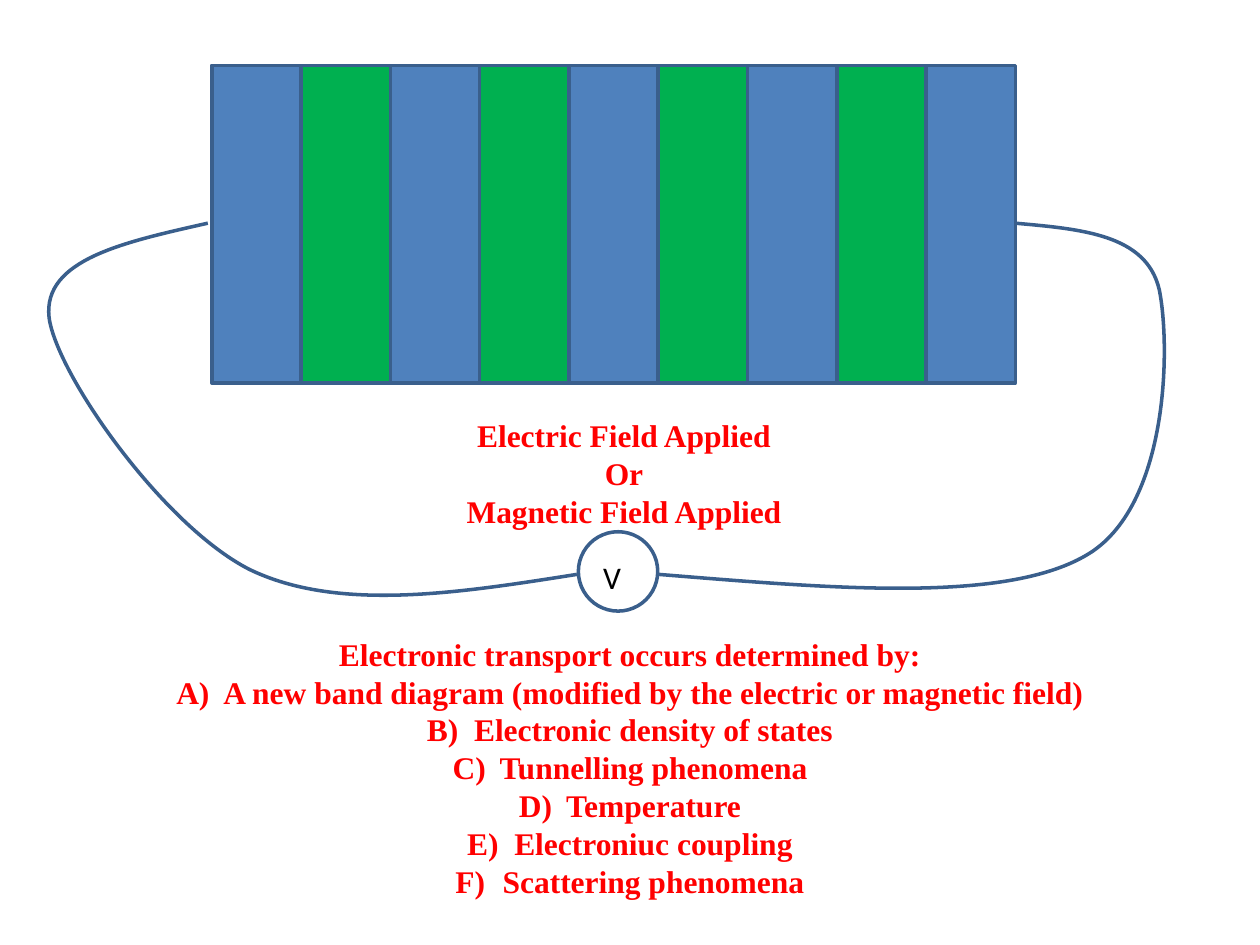
from dataclasses import dataclass

from lxml.etree import SubElement as Sub
from pptx import Presentation
from pptx.dml.color import RGBColor as Rgb
from pptx.enum.shapes import MSO_SHAPE as Kind
from pptx.enum.text import MSO_ANCHOR as Anchor, MSO_AUTO_SIZE as Auto, PP_ALIGN as Align
from pptx.oxml.ns import qn
from pptx.util import Cm, Pt

HUES = {"well": "4F81BD", "wall": "00B050", "edge": "3A5F8C", "note": "FF0000", "ink": "000000"}
Point = tuple[float, float]


@dataclass(frozen=True)
class Box:
    left: float
    top: float
    width: float
    height: float

    def cm(self) -> list[Cm]:
        return [Cm(n) for n in (self.left, self.top, self.width, self.height)]


@dataclass(frozen=True)
class Wire:
    start: Point
    bends: tuple[Point, ...]


STACK = Box(4.27, 1.32, 16.2, 6.4)
COUNT = 9
METER = Box(11.66, 10.72, 1.6, 1.6)
SIGN = Box(11.91, 11.13, 1.6, 1.02)
FIELD = Box(7.87, 8.26, 9.42, 2.57)
CAUSE = Box(0, 12.67, 25.4, 5.64)
WIRES = (
    Wire((11.63, 11.58), ((9.22, 11.96), (6.81, 12.34), (5.03, 11.48),
                          (3.28, 10.59), (1.14, 7.54), (0.99, 6.4),
                          (0.86, 5.23), (2.51, 4.88), (4.19, 4.5))),
    Wire((13.28, 11.58), ((16.74, 11.86), (20.22, 12.17), (21.89, 11.2),
                          (23.57, 10.24), (23.6, 6.96), (23.37, 5.84),
                          (23.11, 4.72), (21.79, 4.62), (20.47, 4.5))),
)
LABEL = ("Electric Field Applied", "Or", "Magnetic Field Applied")
HEAD = "Electronic transport occurs determined by:"
ITEMS = (
    "A new band diagram (modified by the electric or magnetic field)",
    "Electronic density of states",
    "Tunnelling phenomena",
    "Temperature",
    "Electroniuc coupling",
    "Scattering phenomena",
)


def hue(name: str) -> Rgb:
    return Rgb.from_string(HUES[name])


def style(shape, fill: str | None = None) -> None:
    shape.shadow.inherit = False
    if fill:
        shape.fill.solid()
        shape.fill.fore_color.rgb = hue(fill)
    else:
        shape.fill.background()
    shape.line.color.rgb = hue("edge")
    shape.line.width = Pt(2)


def draw_shape(shapes, kind: Kind, box: Box, fill: str | None = None) -> None:
    style(shapes.add_shape(kind, *box.cm()), fill)


def draw_wire(shapes, wire: Wire) -> None:
    pen = shapes.build_freeform(*map(Cm, wire.start))
    pen.add_line_segments([(Cm(x), Cm(y)) for x, y in wire.bends], close=False)
    shape = pen.convert_to_shape()
    style(shape)
    trail = next(shape._element.iter(qn("a:path")))
    steps = trail.findall(qn("a:lnTo"))
    for n in range(0, len(steps), 3):
        curve = Sub(trail, qn("a:cubicBezTo"))
        for step in steps[n:n + 3]:
            curve.append(step[0])
            trail.remove(step)


def write(shape, box: Box, lines: tuple[str, ...], face: str = "Times New Roman",
          tint: str = "note", bold: bool = True, align: Align = Align.CENTER) -> None:
    shape.left, shape.top, shape.width, shape.height = box.cm()
    frame = shape.text_frame
    frame.text = "\n".join(lines)
    frame.word_wrap = True
    frame.auto_size = Auto.SHAPE_TO_FIT_TEXT
    frame.vertical_anchor = Anchor.TOP
    for para in frame.paragraphs:
        para.alignment = align
        para.space_before = Pt(0)
        font = para.font
        font.name, font.size, font.bold = face, Pt(18), bold
        font.color.rgb = hue(tint)


def mark(para, item: bool) -> None:
    props = para._p.get_or_add_pPr()
    gap = Cm(0.95) if item else 0
    props.set("marL", str(gap))
    props.set("indent", str(-gap))
    tag = "a:buAutoNum" if item else "a:buNone"
    dot = props.makeelement(qn(tag), {"type": "alphaUcParenR"} if item else {})
    props.find(qn("a:defRPr")).addprevious(dot)


def main() -> None:
    """Build the superlattice transport slide."""
    deck = Presentation()
    deck.slide_width, deck.slide_height = Cm(25.4), Cm(19.05)
    slide = deck.slides.add_slide(deck.slide_layouts[1])
    shapes = slide.shapes
    step = STACK.width / COUNT
    for n in range(COUNT):
        layer = Box(STACK.left + n * step, STACK.top, step, STACK.height)
        draw_shape(shapes, Kind.RECTANGLE, layer, "wall" if n % 2 else "well")
    draw_shape(shapes, Kind.OVAL, METER)
    write(shapes.add_textbox(*SIGN.cm()), SIGN, ("V",), "Calibri", "ink", False, Align.LEFT)
    for wire in WIRES:
        draw_wire(shapes, wire)
    write(shapes.title, FIELD, LABEL)
    body = slide.placeholders[1]
    write(body, CAUSE, (HEAD, *ITEMS))
    for n, para in enumerate(body.text_frame.paragraphs):
        mark(para, n > 0)
    deck.save("out.pptx")


if __name__ == "__main__":
    main()
